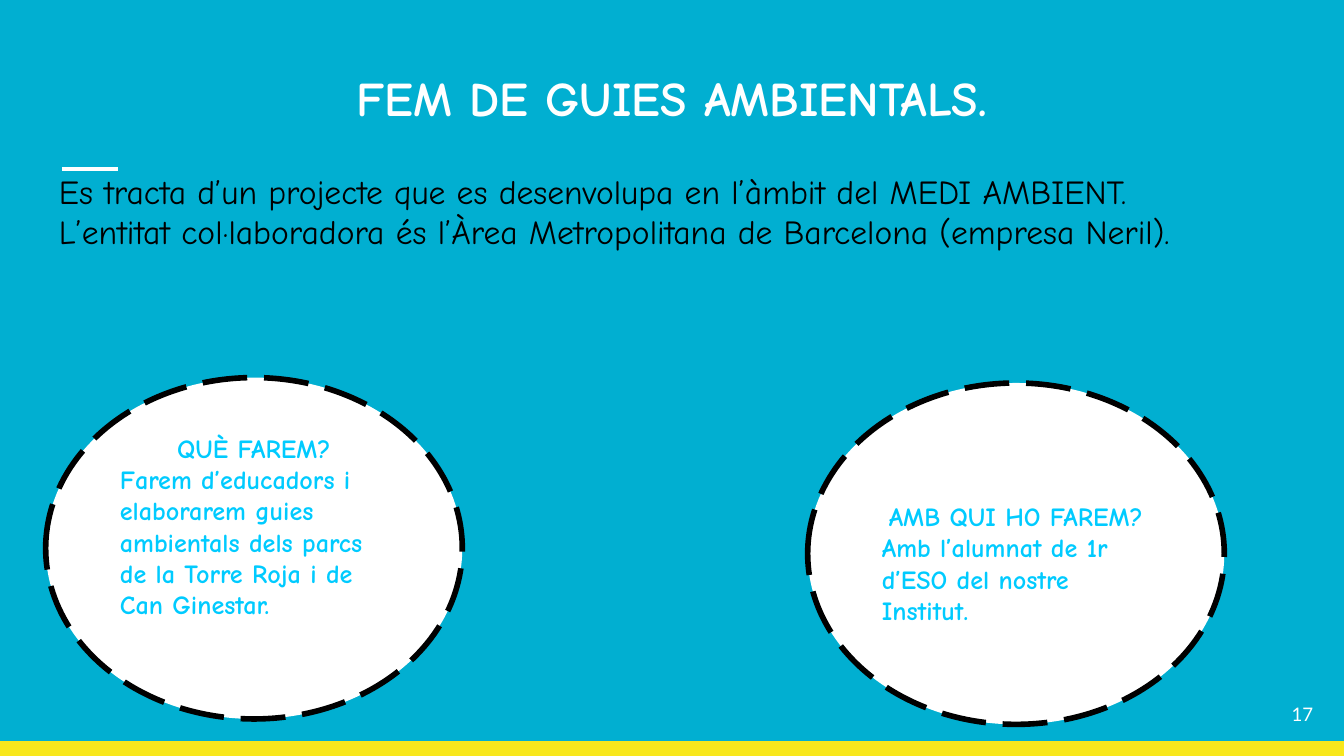
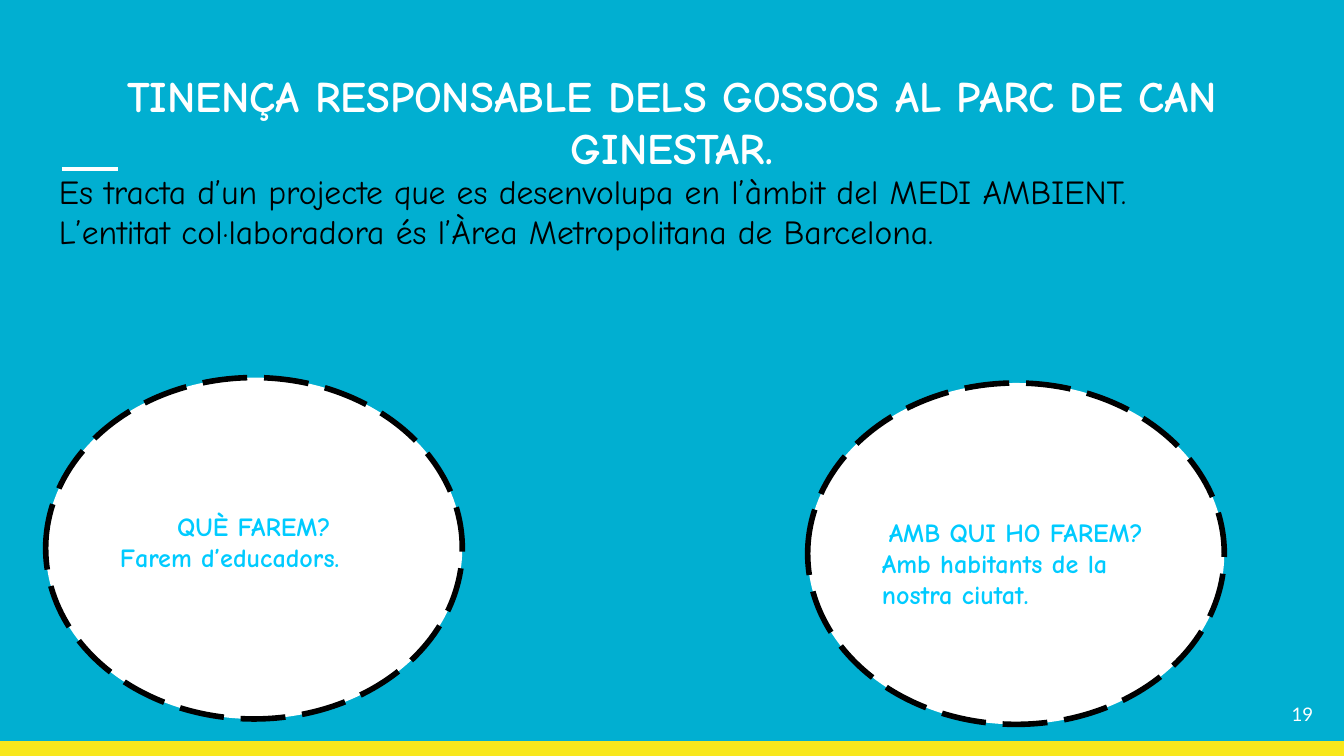
"""Build two project slides, each with a title, an introduction and two dashed ovals."""
from lxml.etree import SubElement
from pptx import Presentation
from pptx.dml.color import RGBColor
from pptx.enum.dml import MSO_LINE
from pptx.enum.shapes import MSO_CONNECTOR, MSO_SHAPE
from pptx.enum.text import MSO_ANCHOR, PP_ALIGN
from pptx.oxml.ns import qn
from pptx.util import Inches, Pt

FIELD = "Es tracta d’un projecte que es desenvolupa en l’àmbit del MEDI AMBIENT."
PARTNER = "L’entitat col·laboradora és l’Àrea Metropolitana de Barcelona"
WHAT, WHO = "QUÈ FAREM?", "AMB QUI HO FAREM?"
PROJECTS = [
    {
        "title": "FEM DE GUIES AMBIENTALS.",
        "title_size": 25.9,
        "introduction": [FIELD, f"{PARTNER} (empresa Neril)."],
        "ovals": [
            (WHAT, "Farem d’educadors i elaborarem guies ambientals dels parcs "
                   "de la Torre Roja i de Can Ginestar.", -0.33),
            (WHO, "Amb l’alumnat de 1r d’ESO del nostre Institut.", 0.14),
        ],
        "number": "17",
    },
    {
        "title": "TINENÇA RESPONSABLE DELS GOSSOS AL PARC DE CAN GINESTAR.",
        "title_size": 23.3,
        "introduction": [FIELD, f"{PARTNER}."],
        "ovals": [
            (WHAT, "Farem d’educadors.", -0.1),
            (WHO, "Amb habitants de la nostra ciutat.", 0.14),
        ],
        "number": "19",
    },
]

COLORS = {"background": "01AFD1", "band": "F8E71C", "light": "FFFFFF",
          "dark": "000000", "accent": "00CBFF"}
WIDTH, MARGIN = 10, 0.34
HEIGHT = WIDTH * 9 / 16
BAND_HEIGHT = 0.11
CONTENT_WIDTH = WIDTH - 2 * MARGIN
OVAL_SIZE = (3.1, 2.54)
OVAL_CORNERS = [(MARGIN, 2.81), (6.01, 2.85)]
INSET = 0.1
DISPLAY, PLAIN = "Comic Neue", "Lato"
LEFT, CENTER, RIGHT = PP_ALIGN.LEFT, PP_ALIGN.CENTER, PP_ALIGN.RIGHT


def color(name):
    return RGBColor.from_string(COLORS[name])


def inches(*lengths):
    return [Inches(length) for length in lengths]


def write(shape, lines, size, ink, font=DISPLAY, bold=False,
          anchor=MSO_ANCHOR.TOP, top=INSET, bottom=INSET):
    frame = shape.text_frame
    settings = {"word_wrap": True, "vertical_anchor": anchor,
                "margin_left": Inches(INSET), "margin_right": Inches(INSET),
                "margin_top": Inches(top), "margin_bottom": Inches(bottom)}
    for name, value in settings.items():
        setattr(frame, name, value)
    for index, (text, alignment) in enumerate(lines):
        paragraph = frame.add_paragraph() if index else frame.paragraphs[0]
        paragraph.alignment = alignment
        run = paragraph.add_run()
        run.text = text
        for name, value in {"name": font, "size": Pt(size), "bold": bold}.items():
            setattr(run.font, name, value)
        run.font.color.rgb = color(ink)


def add_filled(slide, kind, box, fill):
    shape = slide.shapes.add_shape(kind, *inches(*box))
    shape.shadow.inherit = False
    shape.fill.solid()
    shape.fill.fore_color.rgb = color(fill)
    return shape


def add_frame(slide):
    slide.background.fill.solid()
    slide.background.fill.fore_color.rgb = color("background")
    band = add_filled(slide, MSO_SHAPE.RECTANGLE,
                      (0, HEIGHT - BAND_HEIGHT, WIDTH, BAND_HEIGHT), "band")
    band.line.fill.background()
    accent = slide.shapes.add_connector(MSO_CONNECTOR.STRAIGHT,
                                        *inches(0.46, 1.26, 0.88, 1.26))
    accent.line.color.rgb = color("light")
    accent.line.width = Pt(2.25)
    SubElement(accent._element.spPr, qn("a:effectLst"))


def add_oval(slide, corner, heading, answer, drop):
    oval = add_filled(slide, MSO_SHAPE.OVAL, corner + OVAL_SIZE, "light")
    oval.line.color.rgb = color("dark")
    oval.line.width = Pt(3)
    oval.line.dash_style = MSO_LINE.LONG_DASH
    write(oval, [(heading, CENTER), (answer, LEFT)], 14, "accent", bold=True,
          anchor=MSO_ANCHOR.MIDDLE, top=max(drop, 0), bottom=max(-drop, 0))


def add_project(presentation, project):
    slide = presentation.slides.add_slide(presentation.slide_layouts[6])
    add_frame(slide)
    title = slide.shapes.add_textbox(*inches(MARGIN, 0.41, CONTENT_WIDTH, 0.71))
    write(title, [(project["title"], CENTER)], project["title_size"], "light", bold=True)
    introduction = slide.shapes.add_textbox(*inches(MARGIN, 1.17, CONTENT_WIDTH, 1.24))
    write(introduction, [(line, LEFT) for line in project["introduction"]], 18, "dark")
    number = slide.shapes.add_textbox(*inches(9.27, 5.1, 0.6, 0.43))
    write(number, [(project["number"], RIGHT)], 10, "light", font=PLAIN,
          anchor=MSO_ANCHOR.MIDDLE)
    for corner, oval in zip(OVAL_CORNERS, project["ovals"]):
        add_oval(slide, corner, *oval)


def main():
    presentation = Presentation()
    presentation.slide_width, presentation.slide_height = inches(WIDTH, HEIGHT)
    for project in PROJECTS:
        add_project(presentation, project)
    presentation.save("out.pptx")


if __name__ == "__main__":
    main()
